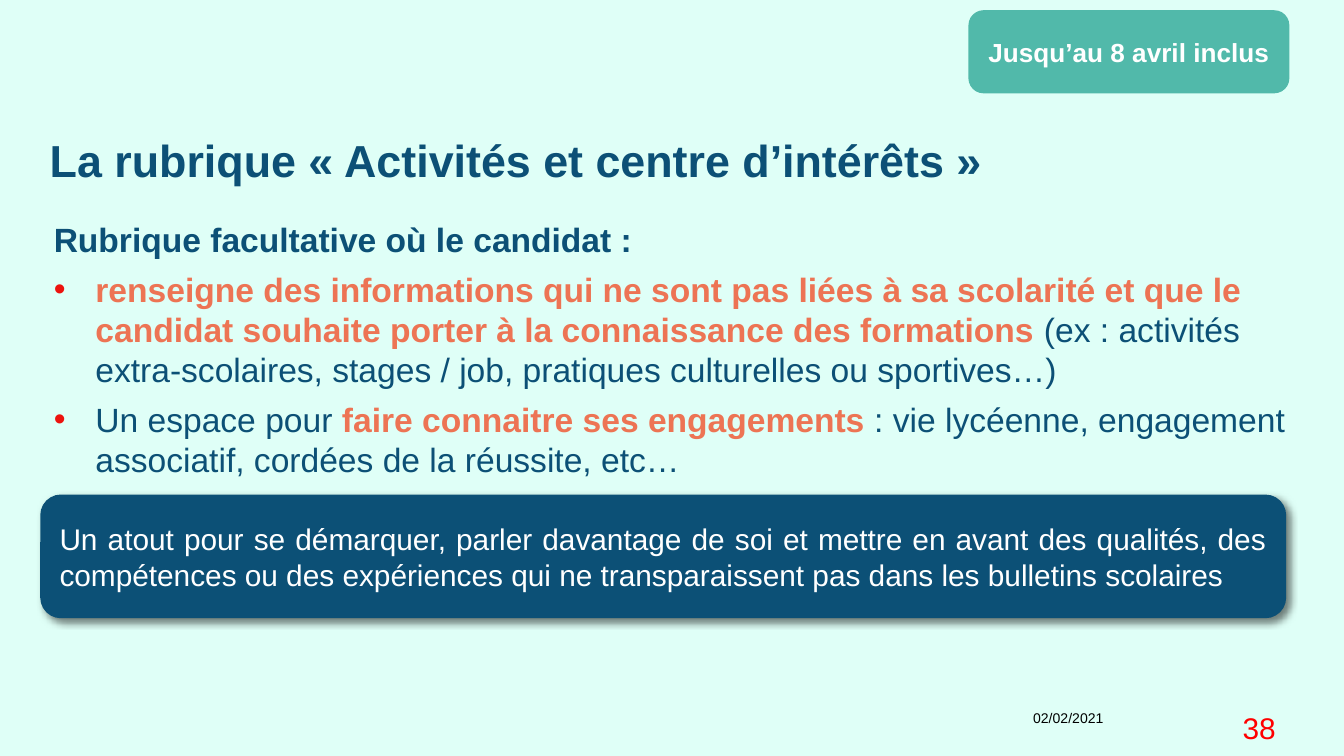
from dataclasses import dataclass

from lxml.etree import SubElement as Sub
from pptx import Presentation
from pptx.dml.color import RGBColor as RGB
from pptx.enum.shapes import MSO_SHAPE as Shape
from pptx.enum.text import MSO_ANCHOR as Anchor, PP_ALIGN as Align
from pptx.oxml.ns import qn
from pptx.util import Inches, Pt


@dataclass(frozen=True)
class Theme:
    font: str = "Arial"
    back: str = "DFFFF7"
    navy: str = "0C5076"
    coral: str = "ED7454"
    teal: str = "51B9AA"
    bullet: str = "EC130E"
    red: str = "FF0000"
    black: str = "000000"
    white: str = "FFFFFF"
    title: float = 24
    body: float = 18
    note: float = 16
    badge: float = 14
    date: float = 7.5


THEME = Theme()
RUBRIC = [
    [("renseigne des informations qui ne sont pas liées à sa scolarité et que le "
      "candidat souhaite porter à la connaissance des formations ", True),
     ("(ex : activités extra-scolaires, stages / job, pratiques culturelles "
      "ou sportives…)", False)],
    [("Un espace pour ", False),
     ("faire connaitre ses engagements ", True),
     (": vie lycéenne, engagement associatif, cordées de la réussite, etc…", False)],
]


def style(run, size, color, bold=False):
    font = run.font
    font.name, font.size, font.bold = THEME.font, Pt(size), bold
    font.color.rgb = RGB.from_string(color)


def write(frame, text, size, color, bold=False, align=Align.LEFT):
    frame.word_wrap = True
    frame.text = text
    para = frame.paragraphs[0]
    para.alignment = align
    style(para.runs[0], size, color, bold)
    return para


def add_text(slide, area, *text, inset=True, **look):
    frame = slide.shapes.add_textbox(*map(Inches, area)).text_frame
    if not inset:
        frame.margin_left = frame.margin_right = 0
        frame.margin_top = frame.margin_bottom = 0
    return frame, write(frame, *text, **look)


def add_bullet(frame, parts):
    para = frame.add_paragraph()
    para.space_after = Pt(5)
    props = para._p.get_or_add_pPr()
    indent = Inches(0.31)
    props.set("marL", str(indent))
    props.set("indent", str(-indent))
    Sub(Sub(props, qn("a:buClr")), qn("a:srgbClr"), val=THEME.bullet)
    Sub(props, qn("a:buFont"), typeface=THEME.font)
    Sub(props, qn("a:buChar"), char="•")
    for text, strong in parts:
        run = para.add_run()
        run.text = text
        style(run, THEME.body, THEME.coral if strong else THEME.navy, strong)


def add_panel(slide, area, fill, *text, **look):
    panel = slide.shapes.add_shape(Shape.ROUNDED_RECTANGLE, *map(Inches, area))
    panel.shadow.inherit = False
    panel.fill.solid()
    panel.fill.fore_color.rgb = RGB.from_string(fill)
    panel.line.fill.background()
    panel.text_frame.vertical_anchor = Anchor.MIDDLE
    write(panel.text_frame, *text, **look)
    return panel


def add_shadow(shape):
    effects = shape._element.spPr.find(qn("a:effectLst"))
    outer = Sub(effects, qn("a:outerShdw"), blurRad=str(Pt(4)), dist=str(Pt(3)),
                dir=str(45 * 60000), algn="tl", rotWithShape="0")
    color = Sub(outer, qn("a:srgbClr"), val=THEME.black)
    Sub(color, qn("a:alpha"), val="50000")


def main():
    deck = Presentation()
    deck.slide_width = Inches(10)
    deck.slide_height = deck.slide_width * 9 // 16
    slide = deck.slides.add_slide(deck.slide_layouts[6])
    slide.background.fill.solid()
    slide.background.fill.fore_color.rgb = RGB.from_string(THEME.back)

    # Title
    _, title = add_text(slide, (0.37, 1.03, 9.21, 0.79),
                        "La rubrique « Activités et centre d’intérêts »",
                        THEME.title, THEME.navy, bold=True, inset=False)
    title.line_spacing = 0.9

    # Body
    frame, intro = add_text(slide, (0.4, 1.63, 9.21, 3.03),
                            "Rubrique facultative où le candidat :",
                            THEME.body, THEME.navy, bold=True, inset=False)
    intro.space_after = Pt(5)
    for parts in RUBRIC:
        add_bullet(frame, parts)

    # Footer
    add_text(slide, (7.03, 5.23, 1.28, 0.39), "02/02/2021",
             THEME.date, THEME.black, align=Align.RIGHT)
    add_text(slide, (8.31, 5.23, 1.28, 0.39), "38",
             THEME.note, THEME.red, align=Align.RIGHT)

    # Key message
    note = add_panel(slide, (0.3, 3.68, 9.27, 0.92), THEME.navy,
                     "Un atout pour se démarquer, parler davantage de soi et mettre en "
                     "avant des qualités, des compétences ou des expériences qui ne "
                     "transparaissent pas dans les bulletins scolaires",
                     THEME.note, THEME.white, align=Align.JUSTIFY)
    add_shadow(note)

    # Deadline badge
    badge = add_panel(slide, (7.22, 0.09, 2.36, 0.59), THEME.teal,
                      "Jusqu’au 8 avril inclus", THEME.badge, THEME.white,
                      bold=True, align=Align.CENTER)
    badge.line.color.rgb = RGB.from_string(THEME.teal)
    badge.line.width = Pt(2)

    deck.save("out.pptx")


if __name__ == "__main__":
    main()
